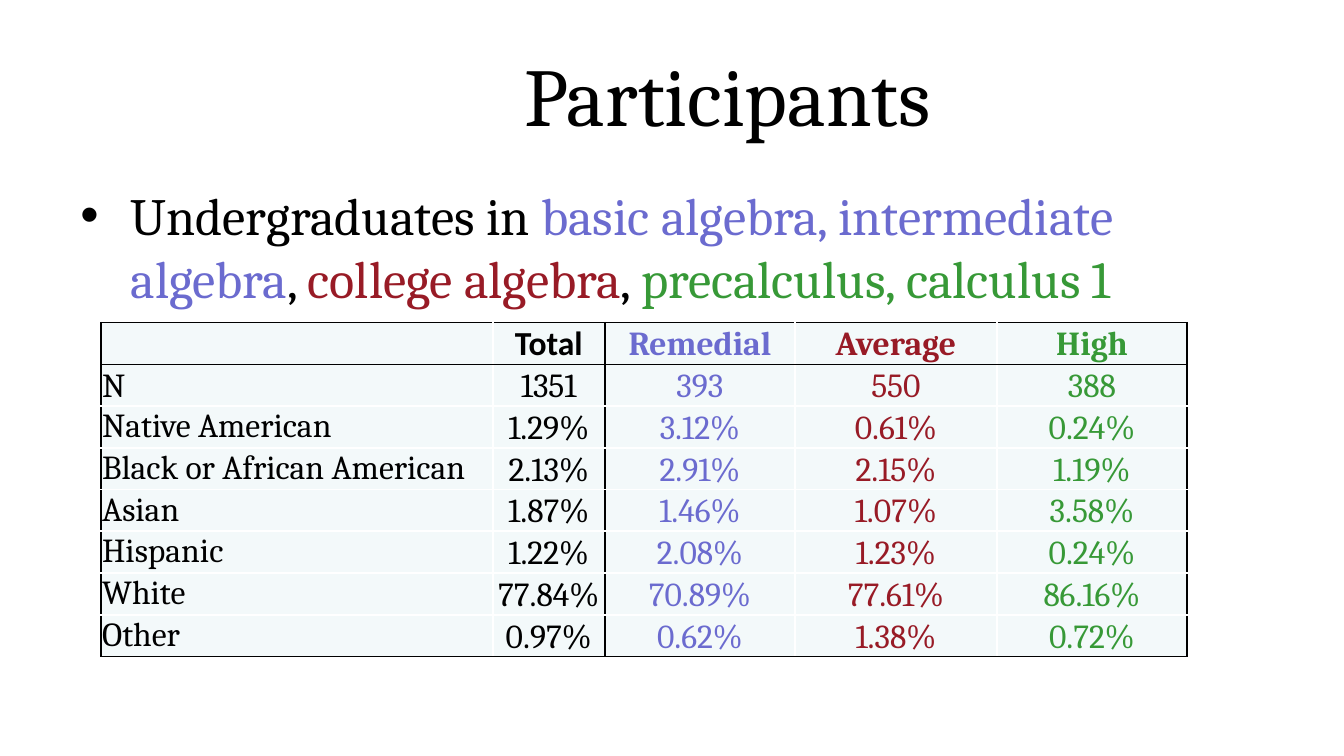
"""Build the Participants slide with its enrolment table."""
from typing import NamedTuple

from lxml.etree import SubElement
from pptx import Presentation
from pptx.dml.color import RGBColor
from pptx.enum.text import MSO_ANCHOR, PP_ALIGN
from pptx.oxml.ns import qn
from pptx.util import Pt

BLACK, WHITE, PALE = "000000", "FFFFFF", "F3F9FA"
VIOLET, RED, GREEN = "6B6BCF", "981B26", "379937"
SERIF, SANS = "Cambria", "Calibri"
ROW_HEIGHT = 22.32


class Column(NamedTuple):
    heading: str
    width: float
    color: str
    values: list[str]
    heading_font: str = SERIF


class Phrase(NamedTuple):
    text: str
    color: str


COLUMNS = [
    Column("", 210, BLACK, ["N", "Native American", "Black or African American",
                            "Asian", "Hispanic", "White", "Other"]),
    Column("Total", 60, BLACK, ["1351", "1.29%", "2.13%", "1.87%", "1.22%", "77.84%", "0.97%"], SANS),
    Column("Remedial", 102, VIOLET, ["393", "3.12%", "2.91%", "1.46%", "2.08%", "70.89%", "0.62%"]),
    Column("Average", 108, RED, ["550", "0.61%", "2.15%", "1.07%", "1.23%", "77.61%", "1.38%"]),
    Column("High", 102, GREEN, ["388", "0.24%", "1.19%", "3.58%", "0.24%", "86.16%", "0.72%"]),
]
COURSES = [
    Phrase("Undergraduates in ", BLACK),
    Phrase("basic algebra, intermediate algebra", VIOLET),
    Phrase(", ", BLACK),
    Phrase("college algebra", RED),
    Phrase(", ", BLACK),
    Phrase("precalculus, calculus 1", GREEN),
]


def set_color(color_owner, color: str) -> None:
    color_owner.rgb = RGBColor.from_string(color)


def set_font(paragraph, name: str, size: float, color: str, bold: bool = False) -> None:
    font = paragraph.font
    font.name, font.size, font.bold = name, Pt(size), bold
    font.fill.solid()
    set_color(font.fill.fore_color, color)


def place(shape, left: float, top: float, width: float, height: float) -> None:
    shape.left, shape.top, shape.width, shape.height = map(Pt, (left, top, width, height))


def add_title(slide, text: str) -> None:
    title = slide.shapes.title
    place(title, 96, 16.5, 588, 67.5)
    title.text_frame.text = text
    paragraph = title.text_frame.paragraphs[0]
    paragraph.alignment = PP_ALIGN.CENTER
    set_font(paragraph, SERIF, 44, BLACK)


def add_bullet(slide, phrases: list[Phrase]) -> None:
    box = slide.shapes.add_textbox(Pt(36), Pt(94.5), Pt(648), Pt(60))
    box.text_frame.word_wrap = True
    paragraph = box.text_frame.paragraphs[0]
    properties = paragraph._p.get_or_add_pPr()
    properties.set("marL", str(Pt(27)))
    properties.set("indent", str(-Pt(27)))
    SubElement(properties, qn("a:buFont"), typeface="Arial")
    SubElement(properties, qn("a:buChar"), char="•")
    set_font(paragraph, SERIF, 28, BLACK)
    for phrase in phrases:
        run = paragraph.add_run()
        run.text = phrase.text
        set_color(run.font.color, phrase.color)


def set_borders(cell, colors: dict[str, str]) -> None:
    properties = cell._tc.get_or_add_tcPr()
    for side, color in colors.items():
        line = SubElement(properties, qn(f"a:ln{side}"), w=str(Pt(1)))
        fill = SubElement(line, qn("a:solidFill"))
        SubElement(fill, qn("a:srgbClr"), val=color)


def fill_cell(cell, text: str, font_name: str, color: str, bold: bool, centered: bool) -> None:
    cell.fill.solid()
    set_color(cell.fill.fore_color, PALE)
    cell.margin_left = cell.margin_right = cell.margin_top = Pt(0.75)
    cell.margin_bottom = Pt(0)
    cell.text = text
    paragraph = cell.text_frame.paragraphs[0]
    paragraph.alignment = PP_ALIGN.CENTER if centered else PP_ALIGN.LEFT
    set_font(paragraph, font_name, 18, color, bold)


def add_participant_table(slide, columns: list[Column]) -> None:
    row_count = len(columns[0].values) + 1
    last_column = len(columns) - 1
    width = sum(column.width for column in columns)
    frame = slide.shapes.add_table(row_count, len(columns), Pt(54), Pt(172.8),
                                   Pt(width), Pt(ROW_HEIGHT * row_count))
    table = frame.table
    for row in table.rows:
        row.height = Pt(ROW_HEIGHT)
    for column_index, column in enumerate(columns):
        table.columns[column_index].width = Pt(column.width)
        for row_index, text in enumerate([column.heading, *column.values]):
            cell = table.cell(row_index, column_index)
            is_heading = row_index == 0
            is_black = {
                "L": column_index in (0, 2),
                "R": column_index in (1, last_column),
                "T": row_index in (0, 1),
                "B": row_index in (0, row_count - 1),
            }
            set_borders(cell, {side: BLACK if black else WHITE for side, black in is_black.items()})
            font_name = column.heading_font if is_heading else SERIF
            fill_cell(cell, text, font_name, column.color, is_heading, column_index > 0)
            is_group_name = column_index == 0 and row_index > 1
            cell.vertical_anchor = MSO_ANCHOR.TOP if is_group_name else MSO_ANCHOR.BOTTOM


def main() -> None:
    presentation = Presentation()
    presentation.slide_width, presentation.slide_height = Pt(720), Pt(405)
    slide = presentation.slides.add_slide(presentation.slide_layouts[5])
    add_title(slide, "Participants")
    add_bullet(slide, COURSES)
    add_participant_table(slide, COLUMNS)
    presentation.save("out.pptx")


if __name__ == "__main__":
    main()
